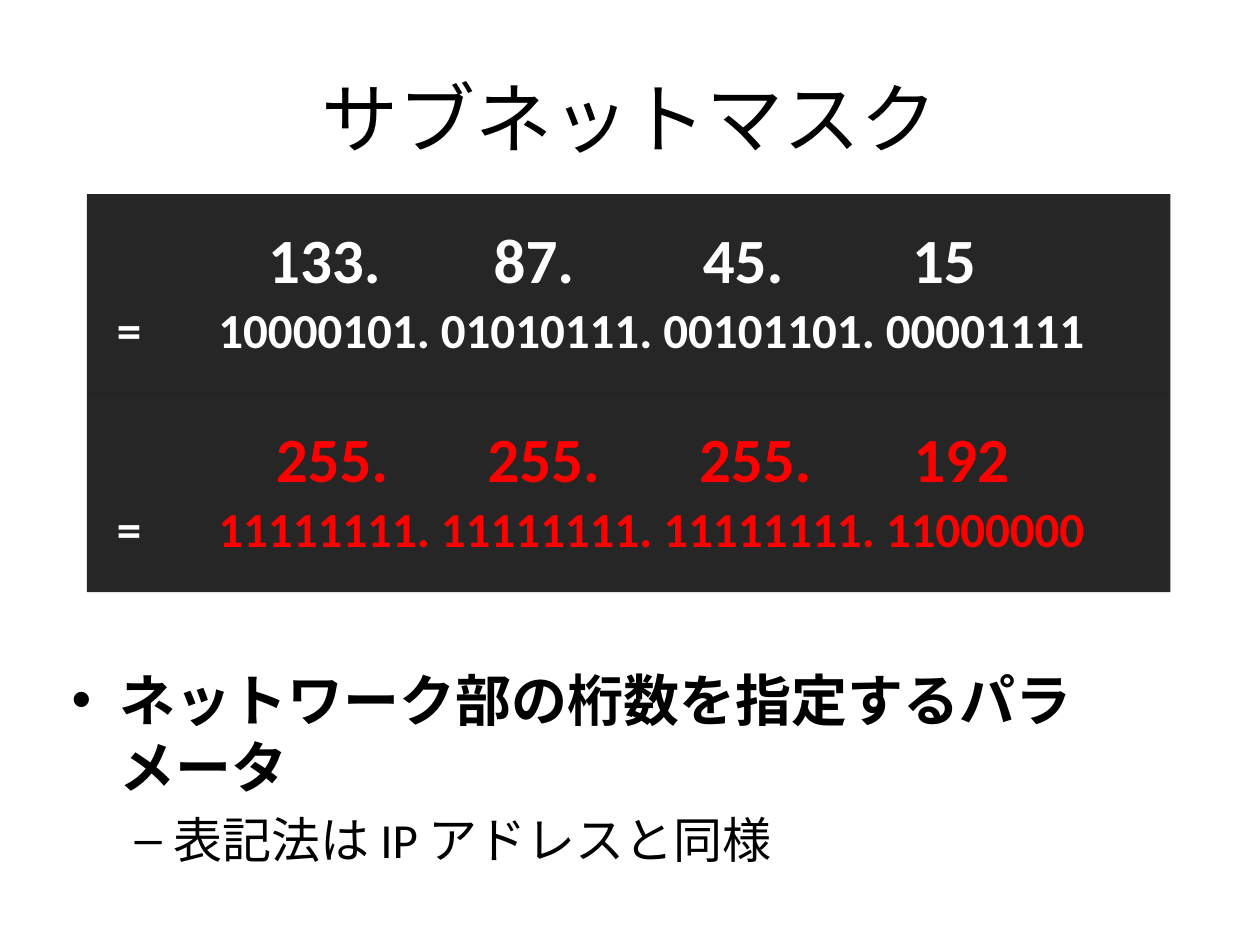
from lxml import etree
from pptx import Presentation
from pptx import util as u
from pptx.dml.color import RGBColor
from pptx.enum import lang, shapes, text
from pptx.oxml.ns import qn

BLACK = RGBColor(0x00, 0x00, 0x00)
WHITE = RGBColor(0xFF, 0xFF, 0xFF)
RED = RGBColor(0xFF, 0x00, 0x00)
LATIN = "Calibri"
JAPANESE = "Noto Sans CJK JP"


def add_run(paragraph, wording, color, **formats):
    run = paragraph.add_run()
    run.text = wording
    run.font.color.rgb = color
    for name, value in {"name": LATIN, **formats}.items():
        setattr(run.font, name, value)
    east_asian = etree.SubElement(run.font._element, qn("a:ea"))
    east_asian.set("typeface", JAPANESE)


def add_frame(slide, left, top, width, height):
    box = slide.shapes.add_textbox(*map(u.Inches, (left, top, width, height)))
    box.text_frame.word_wrap = True
    return box.text_frame


def add_title(slide, left, top, width, height):
    frame = add_frame(slide, left, top, width, height)
    frame.vertical_anchor = text.MSO_ANCHOR.MIDDLE
    heading = frame.paragraphs[0]
    heading.alignment = text.PP_ALIGN.CENTER
    add_run(heading, "サブネットマスク", BLACK, name=JAPANESE, size=u.Pt(44),
            language_id=lang.MSO_LANGUAGE_ID.JAPANESE)


def set_tabs(paragraph, stops):
    tabs = etree.SubElement(paragraph._p.get_or_add_pPr(), qn("a:tabLst"))
    for stop in stops:
        tab = etree.SubElement(tabs, qn("a:tab"))
        tab.set("pos", str(u.Inches(stop)))
        tab.set("algn", "l")


def add_address(slide, left, top, width, height, octets, stops, color):
    panel = slide.shapes.add_shape(
        shapes.MSO_SHAPE.RECTANGLE, *map(u.Inches, (left, top, width, height)))
    panel.shadow.inherit = False
    panel.line.fill.background()
    panel.fill.solid()
    panel.fill.fore_color.rgb = BLACK
    tint = panel.fill._xPr.find(".//" + qn("a:srgbClr"))
    etree.SubElement(tint, qn("a:alpha")).set("val", "85000")

    decimal = add_frame(slide, left + 0.03, top + 0.16, 8.45, 0.7).paragraphs[0]
    set_tabs(decimal, stops)
    dotted = ".\t".join(str(octet) for octet in octets)
    add_run(decimal, "\t" + dotted, color, size=u.Pt(36), bold=True)

    binary = add_frame(slide, left + 0.53, top + 0.79, 7.9, 0.57).paragraphs[0]
    binary.alignment = text.PP_ALIGN.CENTER
    bits = ". ".join(f"{octet:08b}" for octet in octets)
    add_run(binary, bits, color, size=u.Pt(28), bold=True)

    equals = add_frame(slide, left + 0.14, top + 0.79, 0.39, 0.57).paragraphs[0]
    add_run(equals, "=", WHITE, size=u.Pt(28), bold=True)


def add_explanation(slide, left, top, width, height):
    frame = add_frame(slide, left, top, width, height)
    points = [
        ("ネットワーク部の桁数を指定するパラメータ", "•", 0.38, 0.38, 0, 32, True),
        ("表記法は IP アドレスと同様", "–", 0.81, 0.31, 5.6, 28, False),
    ]
    for level, (wording, mark, margin, hanging, before, size, bold) in enumerate(points):
        point = frame.add_paragraph() if level else frame.paragraphs[0]
        point.level = level
        point.space_before = u.Pt(before)
        properties = point._p.get_or_add_pPr()
        properties.set("marL", str(u.Inches(margin)))
        properties.set("indent", str(-u.Inches(hanging)))
        etree.SubElement(properties, qn("a:buFont")).set("typeface", "Arial")
        etree.SubElement(properties, qn("a:buChar")).set("char", mark)
        add_run(point, wording, BLACK, size=u.Pt(size), bold=bold,
                language_id=lang.MSO_LANGUAGE_ID.JAPANESE)


def main():
    deck = Presentation()
    deck.slide_width, deck.slide_height = u.Inches(10), u.Inches(7.5)
    slide = deck.slides.add_slide(deck.slide_layouts[6])
    add_title(slide, 0.5, 0.3, 9, 1.25)
    addresses = [
        ((133, 87, 45, 15), (1.31, 3.1, 4.76, 6.42), WHITE),
        ((255, 255, 255, 192), (1.37, 3.05, 4.73, 6.43), RED),
    ]
    panel_height = 1.58
    for row, (octets, stops, color) in enumerate(addresses):
        add_address(slide, 0.69, 1.54 + row * panel_height, 8.6, panel_height,
                    octets, stops, color)
    add_explanation(slide, 0.47, 5.23, 9, 2.27)
    deck.save("out.pptx")


if __name__ == "__main__":
    main()
